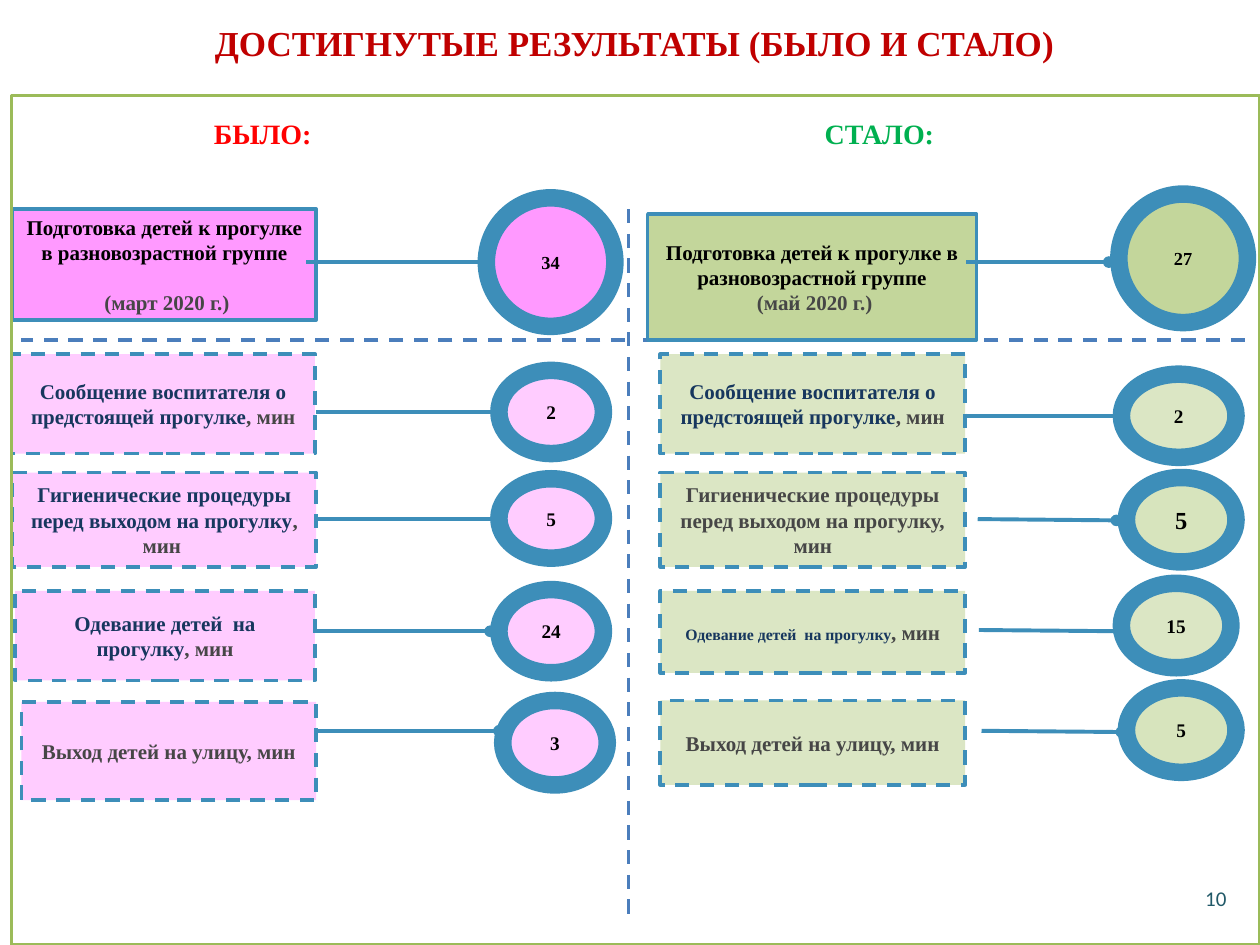
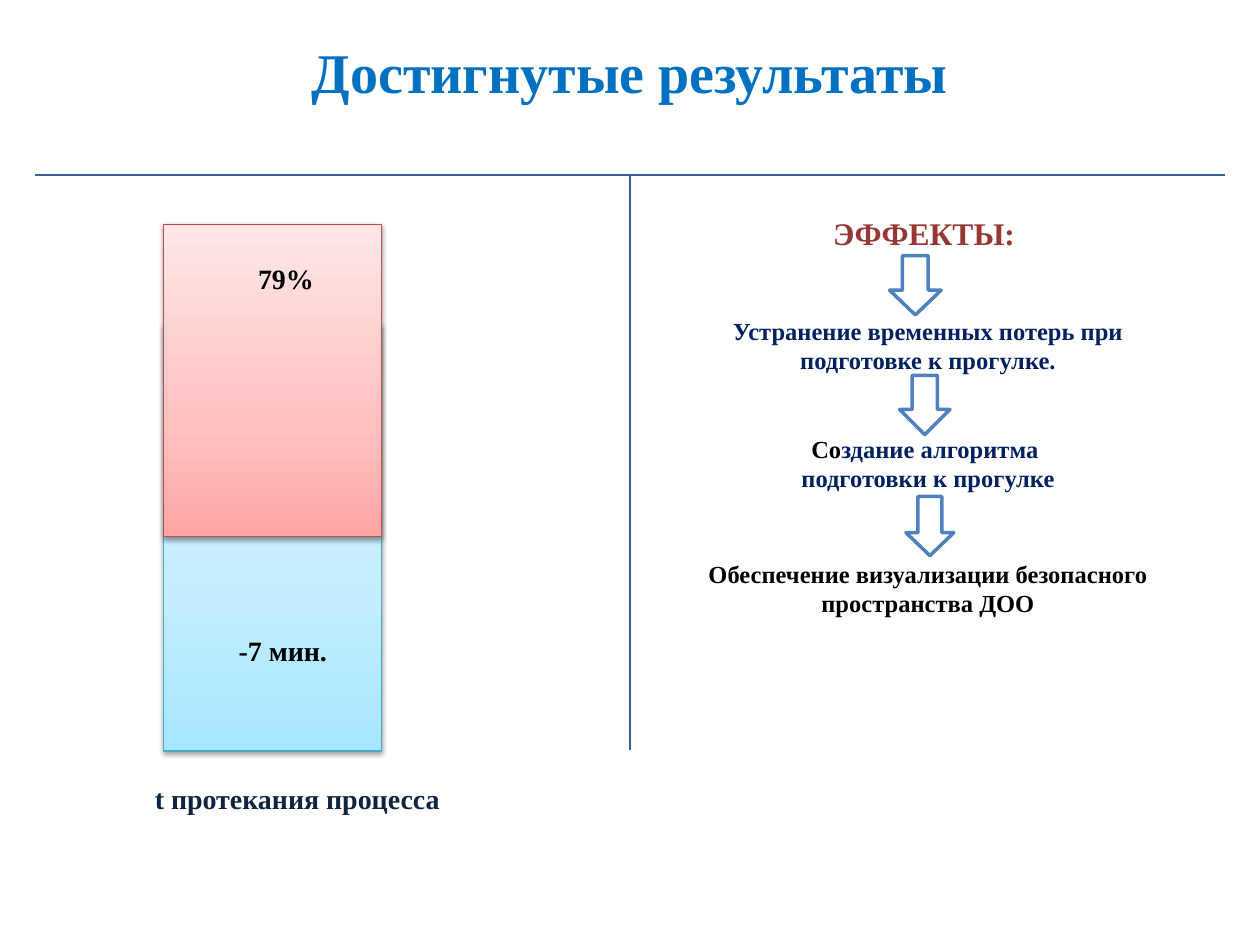
from copy import deepcopy

from lxml import etree
from pptx import Presentation
from pptx import util as u
from pptx.dml.color import RGBColor
from pptx.enum import dml, shapes, text
from pptx.oxml.ns import qn

FONT = "Times New Roman"
BLACK, GREY, NAVY = "000000", "464646", "17375E"
STEEL, DIVIDER, RULE, ARROW = "3D8EB9", "4B7EBC", "376092", "4F81BD"
PINK, PALE_PINK = "FF99FF", "FFCCFF"
GREEN, PALE_GREEN, SOFT_GREEN = "C3D69B", "DBE6C4", "D7E4BD"
DEEP_BLUE = "002060"

PREPARATION = "Подготовка детей к прогулке в разновозрастной группе"
MESSAGE = "Сообщение воспитателя о предстоящей прогулке"
HYGIENE = "Гигиенические процедуры перед выходом на прогулку"
DRESSING = "Одевание детей  на прогулку"
GOING_OUT = "Выход детей на улицу, мин"


def rgb(hex_code):
    return RGBColor.from_string(hex_code)


def inches(values):
    return [u.Inches(value) for value in values]


def write(frame, paragraphs, anchor=text.MSO_ANCHOR.TOP, font=FONT, bold=True):
    """Fill a frame; each paragraph is (space before, [(words, size, colour), ...])."""
    frame.word_wrap = True
    frame.auto_size = text.MSO_AUTO_SIZE.NONE
    frame.vertical_anchor = anchor
    for index, (space, runs) in enumerate(paragraphs):
        paragraph = frame.add_paragraph() if index else frame.paragraphs[0]
        paragraph.alignment = text.PP_ALIGN.CENTER
        paragraph.space_before = u.Pt(space)
        for words, size, colour in runs:
            run = paragraph.add_run()
            run.text = words
            run.font.name, run.font.size, run.font.bold = font, u.Pt(size), bold
            run.font.color.rgb = rgb(colour)


def add_title(slide, place, words, size, colour):
    title = slide.shapes.title
    title.left, title.top, title.width, title.height = inches(place)
    write(title.text_frame, [(0, [(words, size, colour)])], text.MSO_ANCHOR.MIDDLE)


def add_label(slide, place, words, size, colour, **style):
    box = slide.shapes.add_textbox(*inches(place))
    write(box.text_frame, [(0, [(words, size, colour)])], **style)


def add_figure(slide, kind, place, fill, line, weight, dashed=False):
    figure = slide.shapes.add_shape(kind, *inches(place))
    figure.shadow.inherit = False
    if fill:
        figure.fill.solid()
        figure.fill.fore_color.rgb = rgb(fill)
    else:
        figure.fill.background()
    figure.line.color.rgb = rgb(line)
    figure.line.width = u.Pt(weight)
    if dashed:
        figure.line.dash_style = dml.MSO_LINE.DASH
    return figure


def add_line(slide, ends, colour, weight, dashed=False, dot=False):
    line = slide.shapes.add_connector(shapes.MSO_CONNECTOR.STRAIGHT, *inches(ends))
    line.line.color.rgb = rgb(colour)
    line.line.width = u.Pt(weight)
    if dashed:
        line.line.dash_style = dml.MSO_LINE.DASH
    properties = line._element.spPr
    if dot:
        etree.SubElement(properties.find(qn("a:ln")), qn("a:tailEnd"), type="oval")
    etree.SubElement(properties, qn("a:effectLst"))


def add_step(slide, box, paragraphs, link, ring, minutes, fills, dashed=True, size=11):
    """A stage of the walk, linked to a ring that holds its minutes."""
    box_fill, ring_fill = fills
    stage = add_figure(slide, shapes.MSO_SHAPE.RECTANGLE, box, box_fill, STEEL, 2, dashed)
    write(stage.text_frame, paragraphs, text.MSO_ANCHOR.MIDDLE)
    add_line(slide, link, STEEL, 2.25, dot=True)
    circle = add_figure(slide, shapes.MSO_SHAPE.FLOWCHART_CONNECTOR, ring, ring_fill, STEEL, 10)
    frame = circle.text_frame
    frame.margin_left = frame.margin_right = frame.margin_top = frame.margin_bottom = 0
    write(frame, [(0, [(minutes, size, BLACK)])], text.MSO_ANCHOR.MIDDLE)


def add_bar(slide, place, stops, line):
    """A bar with a bottom-to-top gradient and a soft shadow."""
    bar = add_figure(slide, shapes.MSO_SHAPE.RECTANGLE, place, None, line, 0.75)
    bar.fill.gradient()
    bar.fill.gradient_angle = 90
    stop_list = bar._element.spPr.find(".//" + qn("a:gsLst"))
    stop_list.append(deepcopy(stop_list[-1]))
    for stop, (position, colour) in zip(bar.fill.gradient_stops, stops):
        stop.position = position
        stop.color.rgb = rgb(colour)
    shadow = etree.SubElement(
        bar._element.spPr.find(qn("a:effectLst")), qn("a:outerShdw"),
        blurRad=str(u.Pt(3.1)), dist=str(u.Pt(1.6)), dir="5400000", rotWithShape="0")
    shade = etree.SubElement(shadow, qn("a:srgbClr"), val=BLACK)
    etree.SubElement(shade, qn("a:alpha"), val="38000")


def stage_text(name, size=12, colour=NAVY, unit=", мин"):
    return [(0, [(name, size, colour), (unit, 12, GREY)])]


def group_text(month, gap):
    return [(0, [(PREPARATION, 12, BLACK)]), (gap, [(f" ({month} 2020 г.)", 12, GREY)])]


def build_before_after(slide):
    add_title(slide, (0.12, -0.08, 9.9, 0.84), "ДОСТИГНУТЫЕ РЕЗУЛЬТАТЫ (БЫЛО И СТАЛО) ",
              20, "C00000")
    add_line(slide, (4.99, 1.66, 4.99, 7.33), DIVIDER, 2, dashed=True)
    for start, end in ((4.96, 0.17), (9.88, 5.1)):
        add_line(slide, (start, 2.7, end, 2.7), DIVIDER, 2, dashed=True)

    add_step(slide, (0.1, 1.66, 2.41, 0.88), group_text("март", 14.5), (2.43, 2.08, 3.86, 2.08),
             (3.86, 1.57, 1.02, 1.02), "34", (PINK, PINK), dashed=False, size=10.5)
    add_step(slide, (5.14, 1.7, 2.61, 1), group_text("май", 0), (7.67, 2.08, 8.8, 2.08),
             (8.88, 1.54, 1.02, 1.02), "27", (GREEN, GREEN), dashed=False, size=10.5)

    going_out = [(0, [(GOING_OUT, 12, GREY)])]
    before = [
        ((0.09, 2.81, 2.41, 0.79), stage_text(MESSAGE), (2.51, 3.27, 3.96, 3.27),
         (3.96, 2.94, 0.83, 0.66), "2"),
        ((0.1, 3.75, 2.41, 0.75), stage_text(HYGIENE, unit=", мин "), (2.51, 4.12, 3.96, 4.12),
         (3.96, 3.8, 0.83, 0.63), "5"),
        ((0.12, 4.69, 2.38, 0.71), stage_text(DRESSING), (2.51, 5.01, 3.89, 5.01),
         (3.96, 4.68, 0.83, 0.66), "24"),
        ((0.17, 5.57, 2.34, 0.78), going_out, (2.51, 5.8, 3.96, 5.8),
         (3.99, 5.56, 0.83, 0.67), "3"),
    ]
    for step in before:
        add_step(slide, *step, (PALE_PINK, PALE_PINK))

    after = [
        (2.81, 0.79, stage_text(MESSAGE), (7.65, 3.3, 8.9, 3.3),
         (8.9, 2.97, 0.91, 0.66), "2", PALE_GREEN, 11),
        (3.75, 0.75, stage_text(HYGIENE, colour=GREY), (7.76, 4.12, 8.86, 4.13),
         (8.94, 3.79, 0.87, 0.67), "5", SOFT_GREEN, 14),
        (4.69, 0.65, stage_text(DRESSING, size=9), (7.77, 5, 8.88, 5.01),
         (8.9, 4.63, 0.87, 0.67), "15", PALE_GREEN, 11),
        (5.56, 0.67, going_out, (7.79, 5.8, 8.9, 5.81),
         (8.94, 5.46, 0.87, 0.67), "5", SOFT_GREEN, 11),
    ]
    for top, height, paragraphs, link, ring, minutes, ring_fill, size in after:
        add_step(slide, (5.24, top, 2.42, height), paragraphs, link, ring, minutes,
                 (PALE_GREEN, ring_fill), size=size)

    add_figure(slide, shapes.MSO_SHAPE.RECTANGLE, (0.09, 0.76, 9.91, 6.74), None, "9BBB59", 2)
    add_label(slide, (0.51, 0.88, 3.15, 0.37), "БЫЛО:", 16, "FF0000")
    add_label(slide, (5.21, 0.88, 3.54, 0.37), "СТАЛО:", 16, "00B050")
    add_label(slide, (9.46, 6.97, 0.38, 0.31), "10", 12, "215968",
              anchor=text.MSO_ANCHOR.MIDDLE, font="Calibri", bold=False)


def build_effects(slide):
    add_title(slide, (0.12, 0.21, 9.76, 0.71), "Достигнутые результаты", 32, "0070C0")
    add_line(slide, (0.28, 1.39, 9.72, 1.39), RULE, 1.5)
    add_line(slide, (5, 1.39, 5, 5.95), RULE, 1.5)

    add_bar(slide, (1.3, 2.57, 1.73, 3.39),
            [(0, "A7E6FF"), (0.35, "C1EDFF"), (1, "E7F8FF")], "46AAC5")
    add_bar(slide, (1.3, 1.78, 1.73, 2.48),
            [(0, "FFA6A5"), (0.35, "FFC0BF"), (1, "FFE7E7")], "BF4C48")
    add_label(slide, (1.52, 2.03, 1.5, 0.37), "79%", 16, BLACK)
    add_label(slide, (1.46, 4.98, 1.57, 0.37), "-7 мин.", 16, BLACK)
    add_label(slide, (1.06, 6.15, 2.6, 0.37), "t протекания процесса", 16, "0F243E")

    effects = slide.shapes.add_textbox(*inches((5.24, 1.65, 4.25, 3.4)))
    write(effects.text_frame, [
        (0, [("ЭФФЕКТЫ: ", 18, "953735")]),
        (36.5, [("Устранение временных потерь при подготовке к прогулке.", 14, DEEP_BLUE)]),
        (34, [("Со", 14, BLACK), ("здание алгоритма ", 14, DEEP_BLUE)]),
        (0, [("подготовки к прогулке", 14, DEEP_BLUE)]),
        (37.5, [("Обеспечение визуализации безопасного пространства ДОО", 14, BLACK)]),
    ])
    for left, top, width, head in ((7.06, 2.03, 0.41, 0.48), (7.14, 2.98, 0.4, 0.5),
                                   (7.19, 3.94, 0.38, 0.48)):
        arrow = add_figure(slide, shapes.MSO_SHAPE.DOWN_ARROW, (left, top, width, 0.47),
                           "FFFFFF", ARROW, 2)
        arrow.adjustments[1] = head


def main():
    deck = Presentation()
    deck.slide_width, deck.slide_height = inches((10, 7.5))
    title_only = deck.slide_layouts[5]
    for build in (build_before_after, build_effects):
        build(deck.slides.add_slide(title_only))
    deck.save("out.pptx")


if __name__ == "__main__":
    main()
